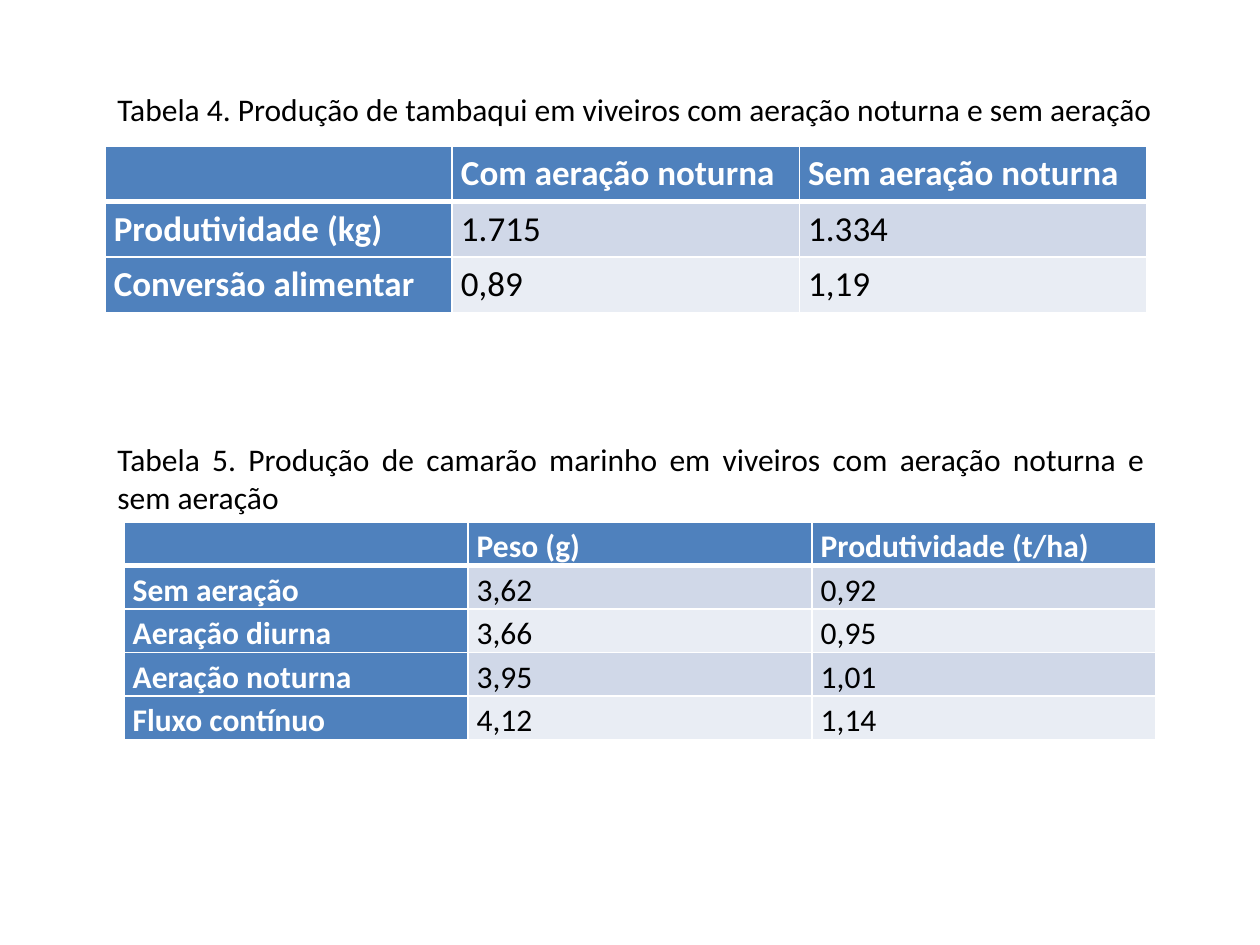
from dataclasses import dataclass

from lxml.etree import SubElement
from pptx import Presentation
from pptx.dml.color import RGBColor as RGB
from pptx.enum.text import MSO_AUTO_SIZE as AutoSize, PP_ALIGN as Align
from pptx.oxml.ns import qn
from pptx.util import Inches, Pt


@dataclass(frozen=True)
class Theme:
    font: str = "Calibri"
    ink: str = "000000"
    paper: str = "FFFFFF"
    head: str = "4F81BD"
    bands: tuple = ("D0D8E8", "E9EDF4")
    caption_size: int = 18
    large: int = 20
    small: int = 18
    rule: int = 1
    head_rule: int = 3
    cell_spacing: float = 1.15


class Deck:
    """Places captions and tables on a 12 by 9 grid of square units."""

    COLUMNS, ROWS = 12, 9

    def __init__(self, theme):
        self.theme = theme
        self.prs = Presentation()
        self.prs.slide_width, self.prs.slide_height = Inches(10), Inches(7.5)
        self.s = self.prs.slides.add_slide(self.prs.slide_layouts[6])

    def box(self, col, row, cols, rows):
        dx = self.prs.slide_width / self.COLUMNS
        dy = self.prs.slide_height / self.ROWS
        return [round(v) for v in (col * dx, row * dy, cols * dx, rows * dy)]

    def style(self, p, size, color, bold=False, align=None):
        p.alignment = align
        p.font.name, p.font.size, p.font.bold = self.theme.font, Pt(size), bold
        p.font.color.rgb = RGB.from_string(color)

    def caption(self, text, *place, align=None):
        tf = self.s.shapes.add_textbox(*self.box(*place)).text_frame
        tf.word_wrap = True
        tf.auto_size = AutoSize.SHAPE_TO_FIT_TEXT
        p = tf.paragraphs[0]
        p.text = text
        self.style(p, self.theme.caption_size, self.theme.ink, align=align)

    def borders(self, cell, top, bottom):
        tcPr = cell._tc.get_or_add_tcPr()
        rule = self.theme.rule
        for side, width in zip("LRTB", (rule, rule, top, bottom)):
            ln = SubElement(tcPr, qn(f"a:ln{side}"), w=str(Pt(width)))
            fill = SubElement(ln, qn("a:solidFill"))
            SubElement(fill, qn("a:srgbClr"), val=self.theme.paper)

    def table(self, data, size, *place):
        t = self.theme
        frame = self.s.shapes.add_table(len(data), len(data[0]), *self.box(*place))
        table = frame.table
        table.first_col = True
        for i, values in enumerate(data):
            for j, value in enumerate(values):
                cell = table.cell(i, j)
                is_head = i == 0 or j == 0
                # The heavy rule lies between the header and the first body row
                self.borders(cell,
                             top=t.head_rule if i == 1 else t.rule,
                             bottom=t.head_rule if i == 0 else t.rule)
                cell.fill.solid()
                cell.fill.fore_color.rgb = RGB.from_string(
                    t.head if is_head else t.bands[(i - 1) % 2])
                cell.margin_left = cell.margin_right = Inches(0.07)
                cell.margin_top = cell.margin_bottom = 0
                p = cell.text_frame.paragraphs[0]
                p.text = value
                p.line_spacing = t.cell_spacing
                self.style(p, size, t.paper if is_head else t.ink,
                           bold=is_head, align=Align.JUSTIFY)


def main():
    theme = Theme()
    deck = Deck(theme)

    # Tambaqui production
    deck.caption("Tabela 4. Produção de tambaqui em viveiros com aeração noturna "
                 "e sem aeração", 1, 0.8, 10.39, 0.48)
    deck.table([
        ("", "Com aeração noturna", "Sem aeração noturna"),
        ("Produtividade (kg)", "1.715", "1.334"),
        ("Conversão alimentar", "0,89", "1,19"),
    ], theme.large, 1, 1.39, 9.92, 1.59)

    # Marine shrimp production
    deck.caption("Tabela 5. Produção de camarão marinho em viveiros com aeração "
                 "noturna e sem aeração", 1, 4.13, 10.02, 0.85, align=Align.JUSTIFY)
    deck.table([
        ("", "Peso (g)", "Produtividade (t/ha)"),
        ("Sem aeração", "3,62", "0,92"),
        ("Aeração diurna", "3,66", "0,95"),
        ("Aeração noturna", "3,95", "1,01"),
        ("Fluxo contínuo", "4,12", "1,14"),
    ], theme.small, 1.18, 4.97, 9.83, 2.07)

    deck.prs.save("out.pptx")


if __name__ == "__main__":
    main()
